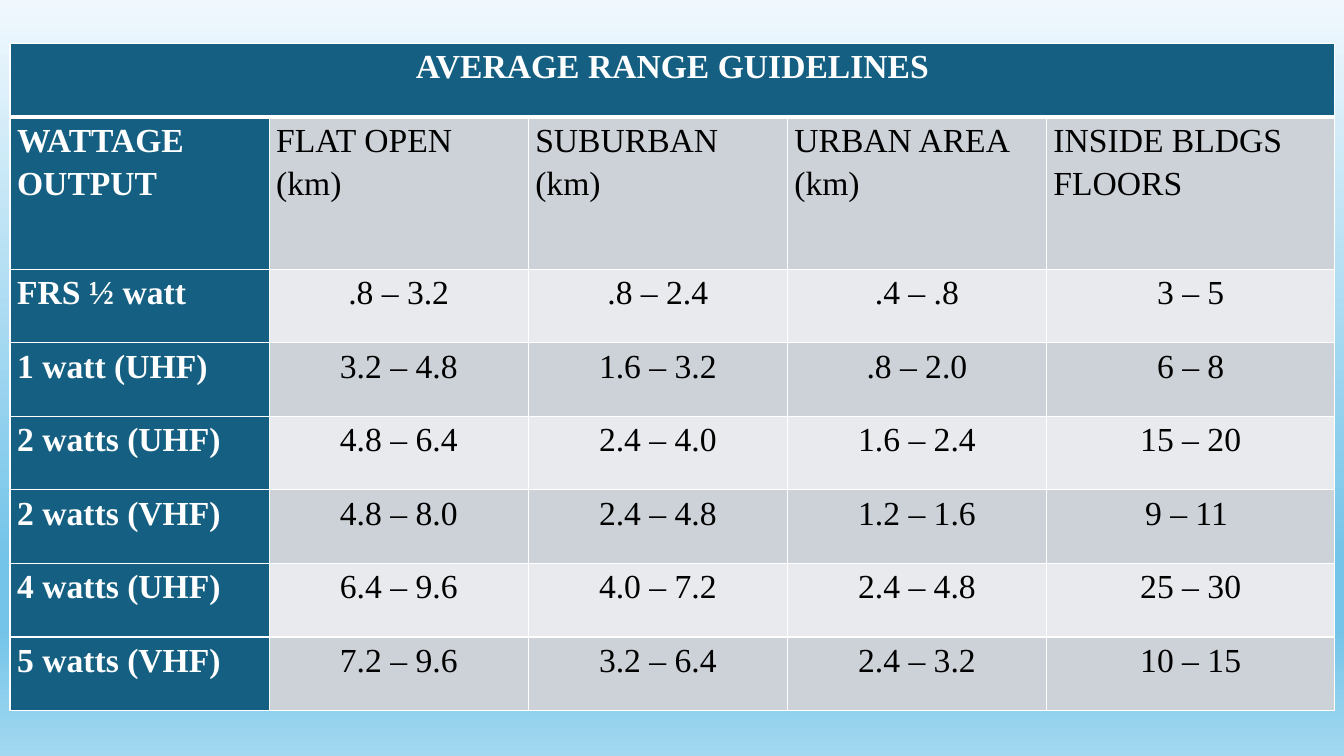
"""Build the slide with the table of average radio range guidelines."""
from dataclasses import dataclass

from lxml.etree import SubElement
from pptx import Presentation
from pptx.dml.color import RGBColor
from pptx.enum.text import PP_ALIGN
from pptx.oxml.ns import qn
from pptx.slide import Slide
from pptx.table import Table, _Cell
from pptx.util import Inches, Pt

COLORS = {
    "heading": "156082",
    "odd": "CCD2D8",
    "even": "E8EAED",
    "white": "FFFFFF",
    "black": "000000",
}
SKY = {0: "F0F8FD", 74: "74C4E9", 83: "74C4E9", 100: "A2D8F0"}
COLUMN_WIDTHS = [2.57] * 4 + [2.86]
ROW_HEIGHTS = [0.73, 1.51] + [0.73] * 6
MARGINS = {
    "margin_left": Inches(0.07),
    "margin_right": Inches(0.07),
    "margin_top": 0,
    "margin_bottom": 0,
}
SPACING = {"line_spacing": 1.15, "space_after": Pt(8)}
LETTERING = {"name": "Times New Roman", "size": Pt(24)}


@dataclass
class RangeRow:
    label: str
    flat_open: str = ""
    suburban: str = ""
    urban: str = ""
    inside: str = ""

    def entries(self) -> list[str]:
        return [self.label, self.flat_open, self.suburban, self.urban, self.inside]


GUIDELINES = [
    RangeRow("AVERAGE RANGE GUIDELINES"),
    RangeRow("WATTAGE OUTPUT", "FLAT OPEN (km)", "SUBURBAN (km)",
             "URBAN AREA (km)", "INSIDE BLDGS FLOORS"),
    RangeRow("FRS ½ watt", ".8 – 3.2", ".8 – 2.4", ".4 – .8", "3 – 5"),
    RangeRow("1 watt (UHF)", "3.2 – 4.8", "1.6 – 3.2", ".8 – 2.0", "6 – 8"),
    RangeRow("2 watts (UHF)", "4.8 – 6.4", "2.4 – 4.0", "1.6 – 2.4", "15 – 20"),
    RangeRow("2 watts (VHF)", "4.8 – 8.0", "2.4 – 4.8", "1.2 – 1.6", "9 – 11 "),
    RangeRow("4 watts (UHF)", "6.4 – 9.6", "4.0 – 7.2", "2.4 – 4.8", "25 – 30"),
    RangeRow("5 watts (VHF)", "7.2 – 9.6", "3.2 – 6.4", "2.4 – 3.2", "10 – 15"),
]


def apply(target: object, values: dict) -> None:
    for attribute, value in values.items():
        setattr(target, attribute, value)


def paint_sky(slide: Slide) -> None:
    fill = slide.background.fill
    fill.gradient()
    fill.gradient_angle = 270
    stops = next(slide.element.iter(qn("a:gsLst")))
    for stop in list(stops):
        stops.remove(stop)
    for percent, color in SKY.items():
        stop = SubElement(stops, qn("a:gs"), pos=str(percent * 1000))
        SubElement(stop, qn("a:srgbClr"), val=color)


def draw_borders(cell: _Cell, row: int) -> None:
    properties = cell._tc.get_or_add_tcPr()
    for position, side in enumerate("LRTB"):
        points = 3 if (row, side) in {(0, "B"), (1, "T")} else 1
        border = SubElement(properties, qn(f"a:ln{side}"), w=str(Pt(points)))
        solid = SubElement(border, qn("a:solidFill"))
        SubElement(solid, qn("a:srgbClr"), val=COLORS["white"])
        properties.insert(position, border)


def fill_cell(cell: _Cell, text: str, row: int, column: int) -> None:
    heading = row == 0 or column == 0
    shade = "heading" if heading else "odd" if row % 2 else "even"
    centered = row == 0 or (row > 1 and column > 0)
    apply(cell, MARGINS)
    cell.fill.solid()
    cell.fill.fore_color.rgb = RGBColor.from_string(COLORS[shade])
    draw_borders(cell, row)
    if not text:
        return
    paragraph = cell.text_frame.paragraphs[0]
    apply(paragraph, SPACING)
    paragraph.alignment = PP_ALIGN.CENTER if centered else PP_ALIGN.LEFT
    wording = paragraph.add_run()
    wording.text = text
    apply(wording.font, LETTERING | {"bold": heading})
    ink = COLORS["white" if heading else "black"]
    wording.font.color.rgb = RGBColor.from_string(ink)


def add_guidelines(slide: Slide) -> Table:
    guidelines = slide.shapes.add_table(
        len(GUIDELINES), len(COLUMN_WIDTHS), Inches(0.1), Inches(0.43),
        Inches(sum(COLUMN_WIDTHS)), Inches(sum(ROW_HEIGHTS))).table
    for column, width in zip(guidelines.columns, COLUMN_WIDTHS):
        column.width = Inches(width)
    for row, height in zip(guidelines.rows, ROW_HEIGHTS):
        row.height = Inches(height)
    for row, guideline in enumerate(GUIDELINES):
        for column, text in enumerate(guideline.entries()):
            fill_cell(guidelines.cell(row, column), text, row, column)
    guidelines.cell(0, 0).merge(guidelines.cell(0, len(COLUMN_WIDTHS) - 1))
    return guidelines


def main() -> None:
    presentation = Presentation()
    apply(presentation, {"slide_width": Inches(13.33), "slide_height": Inches(7.5)})
    slide = presentation.slides.add_slide(presentation.slide_layouts[6])
    paint_sky(slide)
    add_guidelines(slide)
    presentation.save("out.pptx")


if __name__ == "__main__":
    main()
